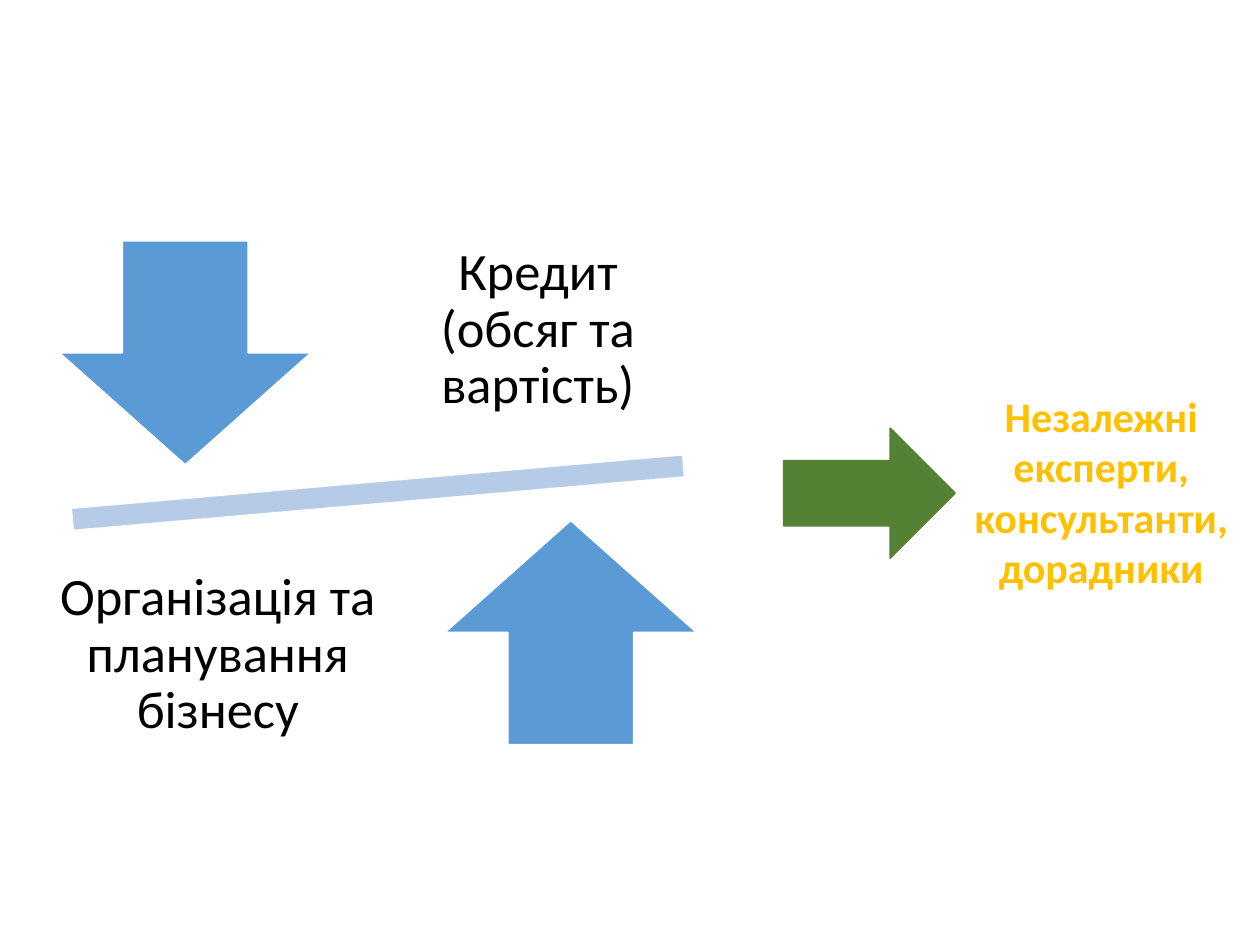
"""Build a slide balancing credit against business planning, leading to advisers."""
from pptx import Presentation
from pptx.dml.color import RGBColor
from pptx.enum.shapes import MSO_SHAPE as Preset
from pptx.enum.text import MSO_ANCHOR as Anchor, PP_ALIGN as Align
from pptx.util import Inches, Pt

WHITE = RGBColor(0xFF, 0xFF, 0xFF)
BLACK = RGBColor(0x00, 0x00, 0x00)
BLUE = RGBColor(0x5B, 0x9B, 0xD5)
PALE_BLUE = RGBColor(0xB5, 0xCB, 0xE7)
GREEN = RGBColor(0x54, 0x82, 0x35)
GOLD = RGBColor(0xFF, 0xC0, 0x00)

WIDTH, HEIGHT = 10, 7.5
BALANCE_CENTER = (3, 3.91)
ARROW_SIZE = (2, 1.78)
ARROW_OFFSET = (1.53, 1.11)
LABEL_OFFSET = (1.27, 1.29)

BALANCE_FONT = {"name": "Calibri", "size": Pt(30)}
ADVISER_FONT = {"name": "Calibri", "size": Pt(24), "bold": True}
BALANCE_PARAGRAPH = {"alignment": Align.CENTER, "line_spacing": 0.9, "space_after": Pt(10.5)}
ADVISER_PARAGRAPH = {"alignment": Align.CENTER}
SIDES = ("margin_left", "margin_top", "margin_right", "margin_bottom")
BALANCE_FRAME = {"word_wrap": True, "vertical_anchor": Anchor.MIDDLE,
                 **dict.fromkeys(SIDES, Inches(0.23))}
ADVISER_FRAME = {"word_wrap": True}

BALANCE_SIDES = [
    (-1, Preset.DOWN_ARROW, "Організація та планування бізнесу", 3),
    (1, Preset.UP_ARROW, "Кредит (обсяг та вартість)", 2.13),
]
ADVISERS = "Незалежні експерти, консультанти, дорадники"


def set_values(target, values):
    for name, value in values.items():
        setattr(target, name, value)


def centered(offset, size):
    """Return left, top, width, height about a point offset from the balance center."""
    corner = [center + shift - length / 2
              for center, shift, length in zip(BALANCE_CENTER, offset, size)]
    return (*corner, *size)


def add_figure(slide, preset, box, fill, line, rotation=0):
    shape = slide.shapes.add_shape(preset, *map(Inches, box))
    shape.shadow.inherit = False
    shape.rotation = rotation
    shape.fill.solid()
    shape.fill.fore_color.rgb = fill
    shape.line.color.rgb = line
    shape.line.width = Pt(1)


def add_label(slide, text, box, color, font, paragraph_format, frame_format):
    frame = slide.shapes.add_textbox(*map(Inches, box)).text_frame
    set_values(frame, frame_format)
    paragraph = frame.paragraphs[0]
    set_values(paragraph, paragraph_format)
    run = paragraph.add_run()
    run.text = text
    set_values(run.font, font)
    run.font.color.rgb = color


def main():
    presentation = Presentation()
    presentation.slide_width, presentation.slide_height = Inches(WIDTH), Inches(HEIGHT)
    slide = presentation.slides.add_slide(presentation.slide_layouts[6])

    add_figure(slide, Preset.MATH_MINUS, centered((0, 0), (6.63, 0.76)), PALE_BLUE, WHITE, 355)
    for side, arrow, text, label_width in BALANCE_SIDES:
        arrow_offset = [side * shift for shift in ARROW_OFFSET]
        label_offset = (side * LABEL_OFFSET[0], -side * LABEL_OFFSET[1])
        add_figure(slide, arrow, centered(arrow_offset, ARROW_SIZE), BLUE, WHITE)
        add_label(slide, text, centered(label_offset, (label_width, 1.87)), BLACK,
                  BALANCE_FONT, BALANCE_PARAGRAPH, BALANCE_FRAME)

    add_label(slide, ADVISERS, (7.59, 3.05, 2.3, 1.72), GOLD,
              ADVISER_FONT, ADVISER_PARAGRAPH, ADVISER_FRAME)
    add_figure(slide, Preset.RIGHT_ARROW, (6.22, 3.4, 1.36, 1.03), GREEN, GREEN)
    presentation.save("out.pptx")


if __name__ == "__main__":
    main()
